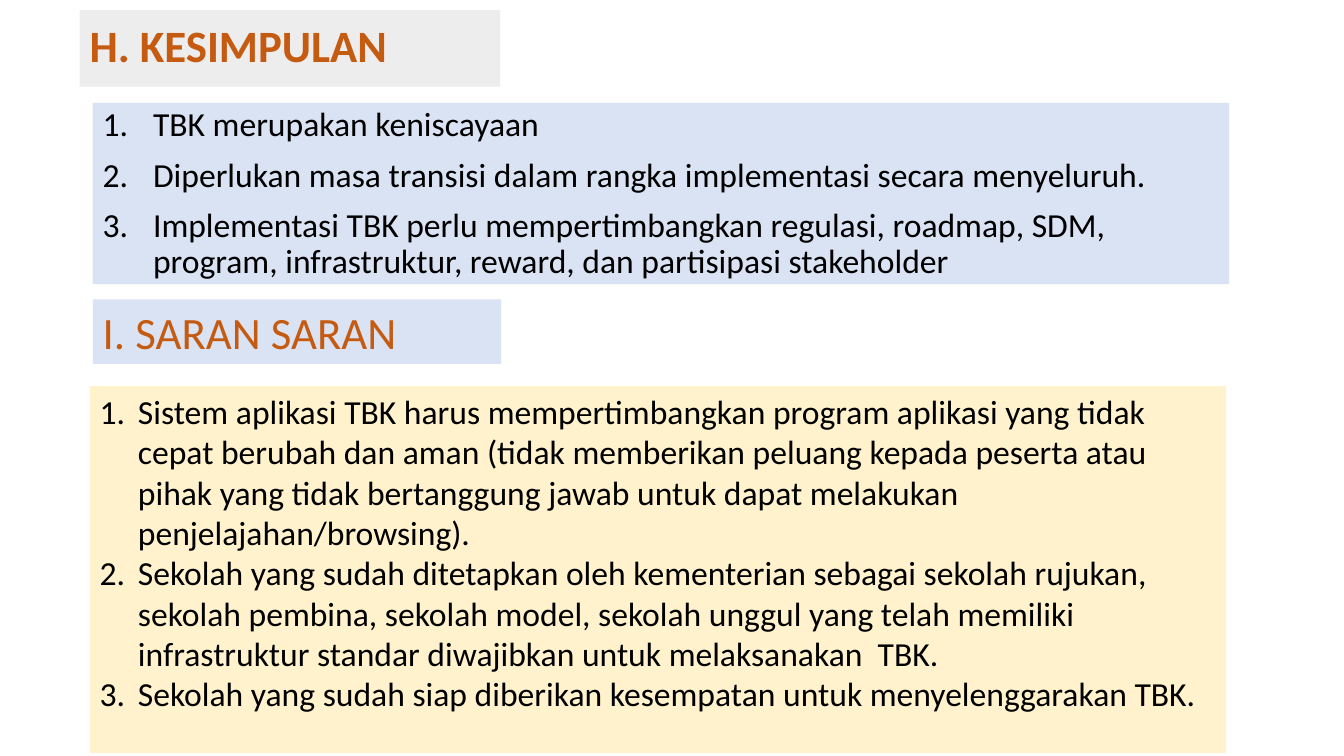
"""Builds the slide with the conclusions and suggestions on TBK."""
from lxml import etree
from pptx import Presentation
from pptx import util as u
from pptx.dml.color import RGBColor
from pptx.enum import shapes, text
from pptx.oxml.ns import qn

ORANGE = RGBColor(0xC5, 0x5A, 0x11)
BLACK = RGBColor(0, 0, 0)
GREY = RGBColor(0xED, 0xED, 0xED)
BLUE = RGBColor(0xDA, 0xE3, 0xF3)
CREAM = RGBColor(0xFF, 0xF2, 0xCC)

conclusions = [
    "TBK merupakan keniscayaan",
    "Diperlukan masa transisi dalam rangka implementasi secara menyeluruh.",
    "Implementasi TBK perlu mempertimbangkan regulasi, roadmap, SDM, program, "
    "infrastruktur, reward, dan partisipasi stakeholder",
]
suggestions = [
    "Sistem aplikasi TBK harus mempertimbangkan program aplikasi yang tidak cepat "
    "berubah dan aman (tidak memberikan peluang kepada peserta atau pihak yang tidak "
    "bertanggung jawab untuk dapat melakukan penjelajahan/browsing).",
    "Sekolah yang sudah ditetapkan oleh kementerian sebagai sekolah rujukan, sekolah "
    "pembina, sekolah model, sekolah unggul yang telah memiliki infrastruktur standar "
    "diwajibkan untuk melaksanakan  TBK.",
    "Sekolah yang sudah siap diberikan kesempatan untuk menyelenggarakan TBK.",
]

deck = Presentation()
deck.slide_width, deck.slide_height = u.Inches(13.33), u.Inches(7.5)
slide = deck.slides.add_slide(deck.slide_layouts[6])


def add_panel(place, fill, lines, size, color, bold=False, spacing=1.0, gap=0, indent=0):
    """Add a filled panel; a positive indent numbers its lines."""
    panel = slide.shapes.add_shape(shapes.MSO_SHAPE.RECTANGLE, *map(u.Inches, place))
    panel.shadow.inherit = False
    panel.fill.solid()
    panel.fill.fore_color.rgb = fill
    panel.line.fill.background()
    frame = panel.text_frame
    frame.word_wrap = True
    frame.vertical_anchor = text.MSO_ANCHOR.TOP if indent else text.MSO_ANCHOR.MIDDLE
    frame.text = "\n".join(lines)
    for order, item in enumerate(frame.paragraphs):
        item.alignment = text.PP_ALIGN.LEFT
        item.line_spacing = spacing
        item.space_before = u.Pt(gap if order else 0)
        font = item.runs[0].font
        font.name, font.size, font.bold = "Calibri", u.Pt(size), bold
        font.color.rgb = color
        if indent:
            properties = item._p.get_or_add_pPr()
            properties.set("marL", str(u.Inches(indent)))
            properties.set("indent", str(-u.Inches(indent)))
            etree.SubElement(properties, qn("a:buFont"), typeface="+mj-lt")
            etree.SubElement(properties, qn("a:buAutoNum"), type="arabicPeriod")


add_panel((0.79, 0.1, 4.17, 0.76), GREY, ["H. KESIMPULAN"], 32, ORANGE, bold=True, spacing=0.9)
add_panel((0.92, 1.02, 11.27, 1.8), BLUE, conclusions, 24, BLACK, spacing=0.9, gap=10, indent=0.5)
add_panel((0.92, 2.97, 4.05, 0.64), BLUE, ["I. SARAN SARAN"], 32, ORANGE)
add_panel((0.89, 3.83, 11.27, 3.64), CREAM, suggestions, 24, BLACK, indent=0.38)

deck.save("out.pptx")
